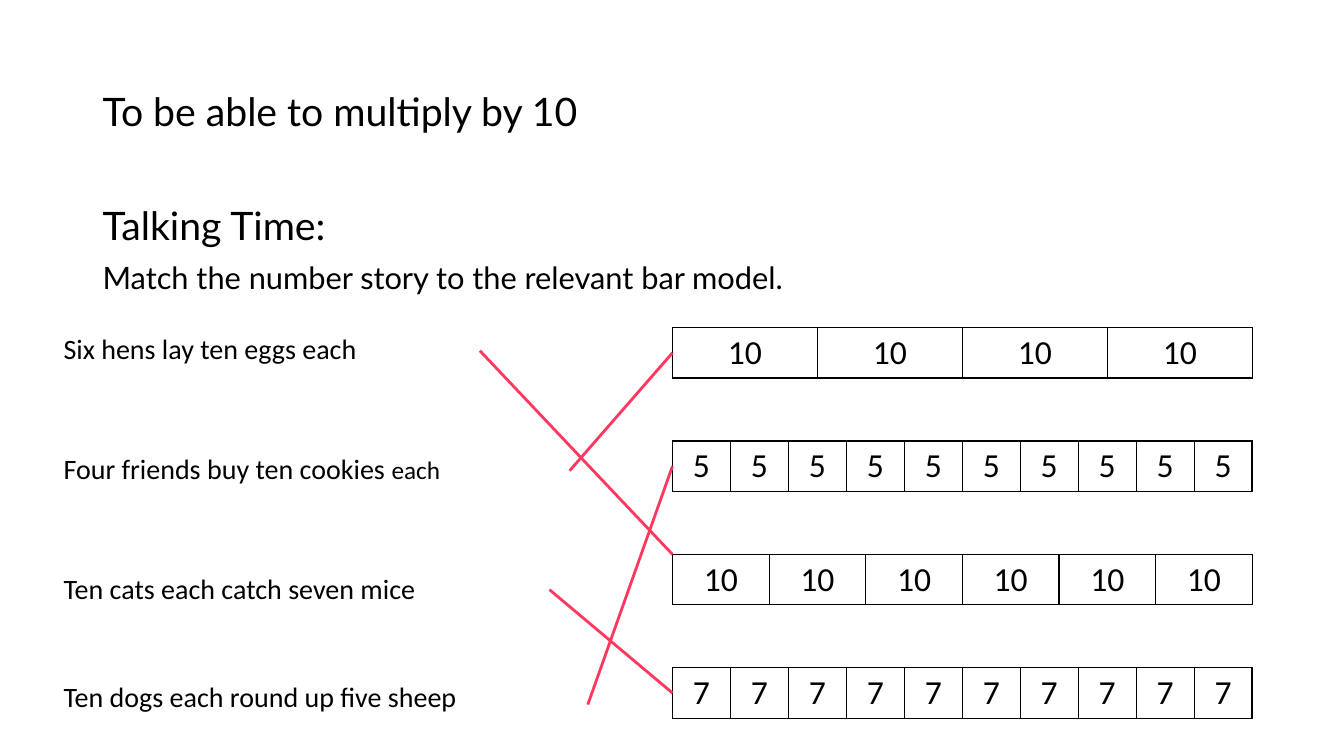
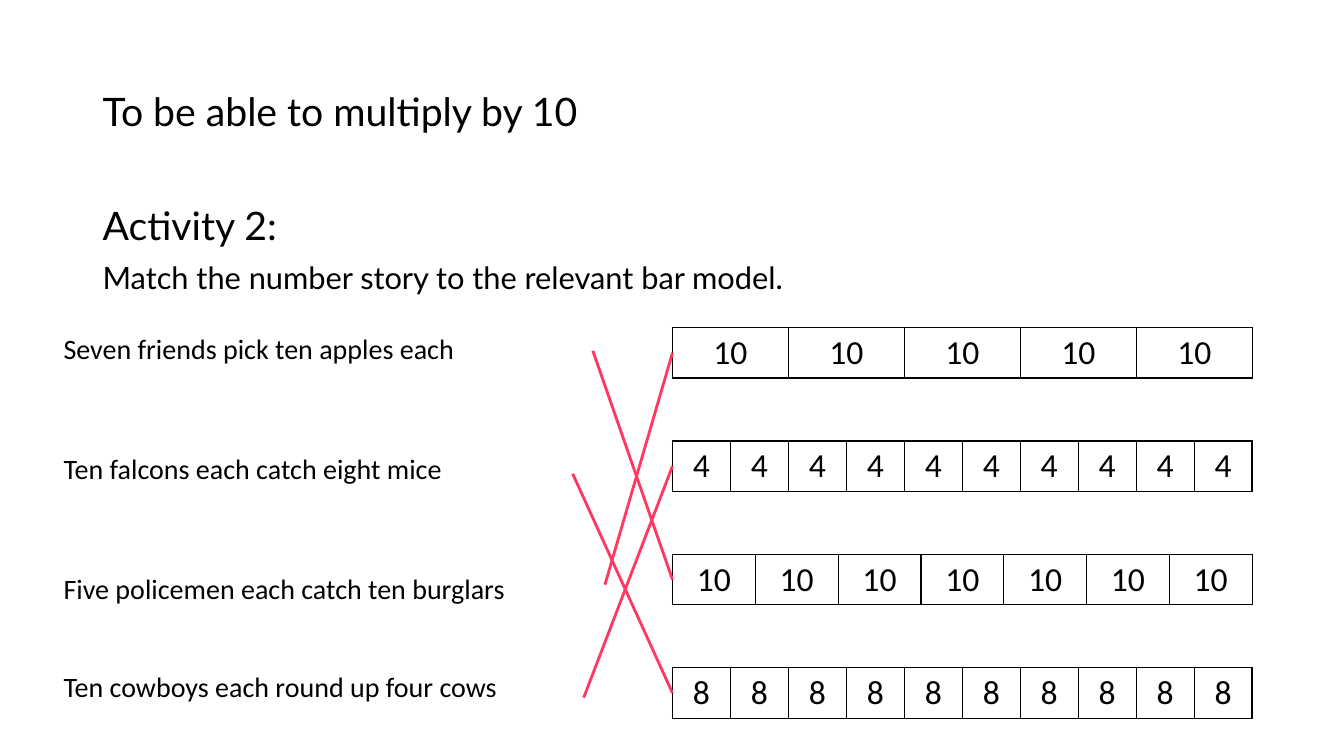
"""Build two slides that match number stories to bar models."""
from lxml import etree
from pptx import Presentation
from pptx.dml.color import RGBColor
from pptx.enum import shapes, text
from pptx.oxml import ns
from pptx.util import Inches, Pt

BLACK = RGBColor(0x00, 0x00, 0x00)
WHITE = RGBColor(0xFF, 0xFF, 0xFF)
PINK = RGBColor(0xFF, 0x38, 0x60)
HEADING_FONT = "Lato"
TABLE_FONT = "Calibri"
PLAIN_TABLE = "{2D5ABB26-0587-4C30-8999-92F81FD0307C}"

TITLE = "To be able to multiply by 10"
TASK = "Match the number story to the relevant bar model."
TEXT_LEFT = 0.92
ROW_WIDTH = 5.75
STORY_LEFT, STORY_HEIGHT = 0.53, 0.43
BAR_LEFT, BAR_TOP, BAR_HEIGHT = 6.67, 3.25, 0.5
BAR_STEP = 4.5 / 4

SLIDES = [
    {
        "heading": "Talking Time:",
        "bars": [("10", 4), ("5", 10), ("10", 6), ("7", 10)],
        "stories": [
            (3.25, [("Six hens lay ten eggs each", 20)]),
            (4.44, [("Four friends buy ten cookies ", 20), ("each", 18)]),
            (5.63, [("Ten cats each catch seven mice", 20)]),
            (6.7, [("Ten dogs each round up five sheep", 20)]),
        ],
        "matches": [(4.76, 3.48, 2, 0), (5.65, 4.67, 0, 0.25),
                    (5.45, 5.85, 3, 0.25), (5.83, 6.99, 1, 0.25)],
    },
    {
        "heading": "Activity 2:",
        "bars": [("10", 5), ("4", 10), ("10", 7), ("8", 10)],
        "stories": [
            (3.25, [("Seven friends pick ten apples each", 20)]),
            (4.44, [("Ten falcons each catch eight mice", 20)]),
            (5.63, [("Five policemen each catch ten burglars", 20)]),
            (6.6, [("Ten cowboys each round up four cows", 20)]),
        ],
        "matches": [(5.68, 4.7, 3, 0.25), (5.88, 3.48, 2, 0.25),
                    (5.79, 6.92, 1, 0.25), (6, 5.8, 0, 0.25)],
    },
]


def style_font(font, name, size):
    """Set the typeface, size and black colour of a font."""
    font.name = name
    font.size = Pt(size)
    font.color.rgb = BLACK


def add_text(s, top, width, height, lines, anchor):
    """Add a text box with one paragraph per (text, size) line."""
    box = s.shapes.add_textbox(Inches(TEXT_LEFT), Inches(top), Inches(width), Inches(height))
    tf = box.text_frame
    tf.word_wrap = True
    tf.vertical_anchor = anchor
    tf.text = "\n".join(line for line, _ in lines)
    for i, (p, (_, size)) in enumerate(zip(tf.paragraphs, lines)):
        p.line_spacing = 0.9
        if i:
            p.space_before = Pt(10)
        style_font(p.runs[0].font, HEADING_FONT, size)


def add_row(s, left, top, height, columns):
    """Add a plain one-row table with equal columns and return its cells."""
    frame = s.shapes.add_table(1, columns, Inches(left), Inches(top),
                               Inches(ROW_WIDTH), Inches(height))
    table = frame.table
    table.first_row = False
    table.horz_banding = False
    frame._element.find(".//" + ns.qn("a:tableStyleId")).text = PLAIN_TABLE
    for column in table.columns:
        column.width = Inches(ROW_WIDTH / columns)
    return list(table.iter_cells())


def add_borders(cell):
    """Draw a thin black line on each side of a cell."""
    tc_pr = cell._tc.get_or_add_tcPr()
    for i, side in enumerate(("a:lnL", "a:lnR", "a:lnT", "a:lnB")):
        ln = etree.Element(ns.qn(side), w=str(Pt(1)))
        fill = etree.SubElement(ln, ns.qn("a:solidFill"))
        etree.SubElement(fill, ns.qn("a:srgbClr"), val=str(BLACK))
        tc_pr.insert(i, ln)


def add_bar(s, top, label, parts):
    """Add a bar model with the same label in each part."""
    for cell in add_row(s, BAR_LEFT, top, BAR_HEIGHT, parts):
        cell.fill.solid()
        cell.fill.fore_color.rgb = WHITE
        add_borders(cell)
        cell.text = label
        p = cell.text_frame.paragraphs[0]
        p.alignment = text.PP_ALIGN.CENTER
        style_font(p.runs[0].font, TABLE_FONT, 24)


def add_story(s, top, parts):
    """Add a number story made of (text, size) parts."""
    cell = add_row(s, STORY_LEFT, top, STORY_HEIGHT, 1)[0]
    cell.fill.background()
    p = cell.text_frame.paragraphs[0]
    for words, size in parts:
        r = p.add_run()
        r.text = words
        style_font(r.font, TABLE_FONT, size)


def add_match(s, x, y, bar, offset):
    """Draw a line from a story to the left edge of a bar."""
    line = s.shapes.add_connector(
        shapes.MSO_CONNECTOR.STRAIGHT, Inches(x), Inches(y),
        Inches(BAR_LEFT), Inches(BAR_TOP + bar * BAR_STEP + offset))
    line.line.color.rgb = PINK
    line.line.width = Pt(2)
    etree.SubElement(line._element.spPr, ns.qn("a:effectLst"))


def add_matching_slide(prs, content):
    """Add a slide with headings, bars, stories and matching lines."""
    s = prs.slides.add_slide(prs.slide_layouts[6])
    add_text(s, 0.4, 9.6, 1.45, [(TITLE, 28)], text.MSO_ANCHOR.MIDDLE)
    add_text(s, 2, 11.5, 1.1, [(content["heading"], 28), (TASK, 22)], text.MSO_ANCHOR.TOP)
    for i, (label, parts) in enumerate(content["bars"]):
        add_bar(s, BAR_TOP + i * BAR_STEP, label, parts)
    for top, parts in content["stories"]:
        add_story(s, top, parts)
    for match in content["matches"]:
        add_match(s, *match)


def main():
    """Build and save the presentation."""
    prs = Presentation()
    prs.slide_width = Inches(13.33)
    prs.slide_height = Inches(7.5)
    for content in SLIDES:
        add_matching_slide(prs, content)
    prs.save("out.pptx")


if __name__ == "__main__":
    main()
